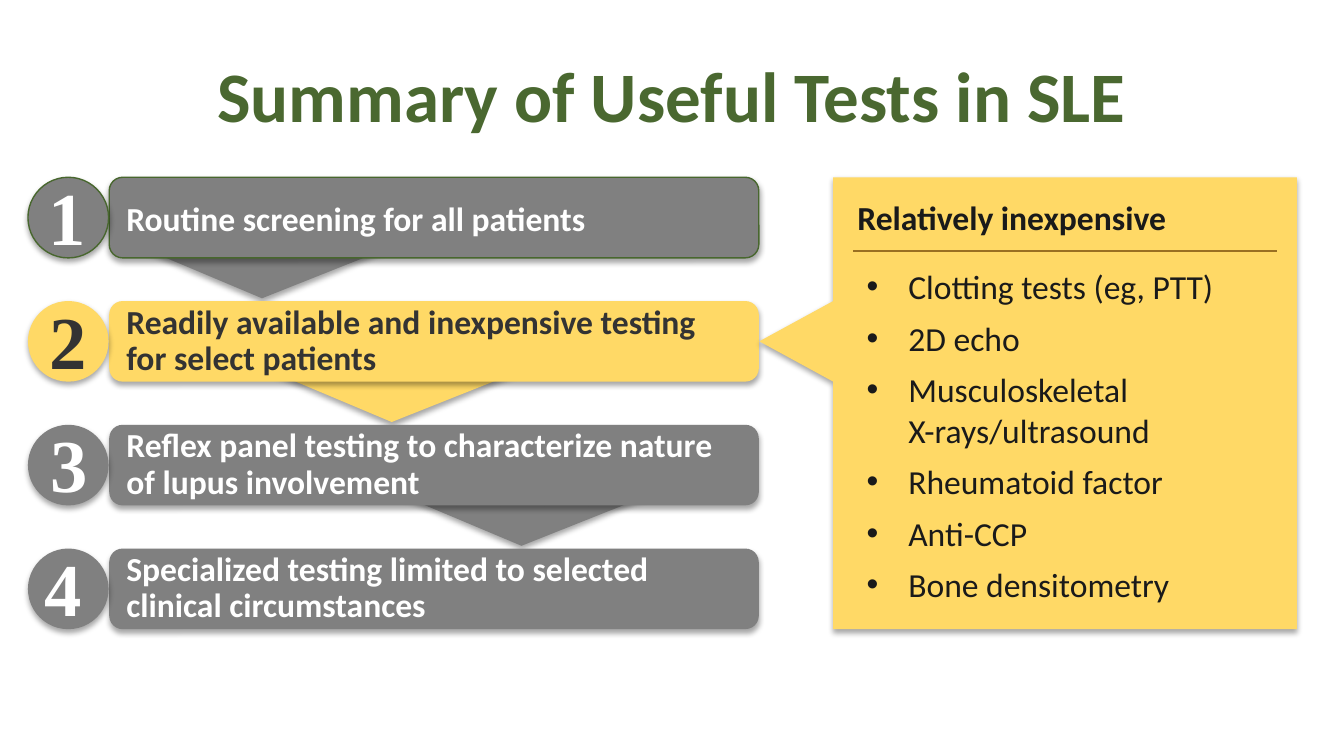
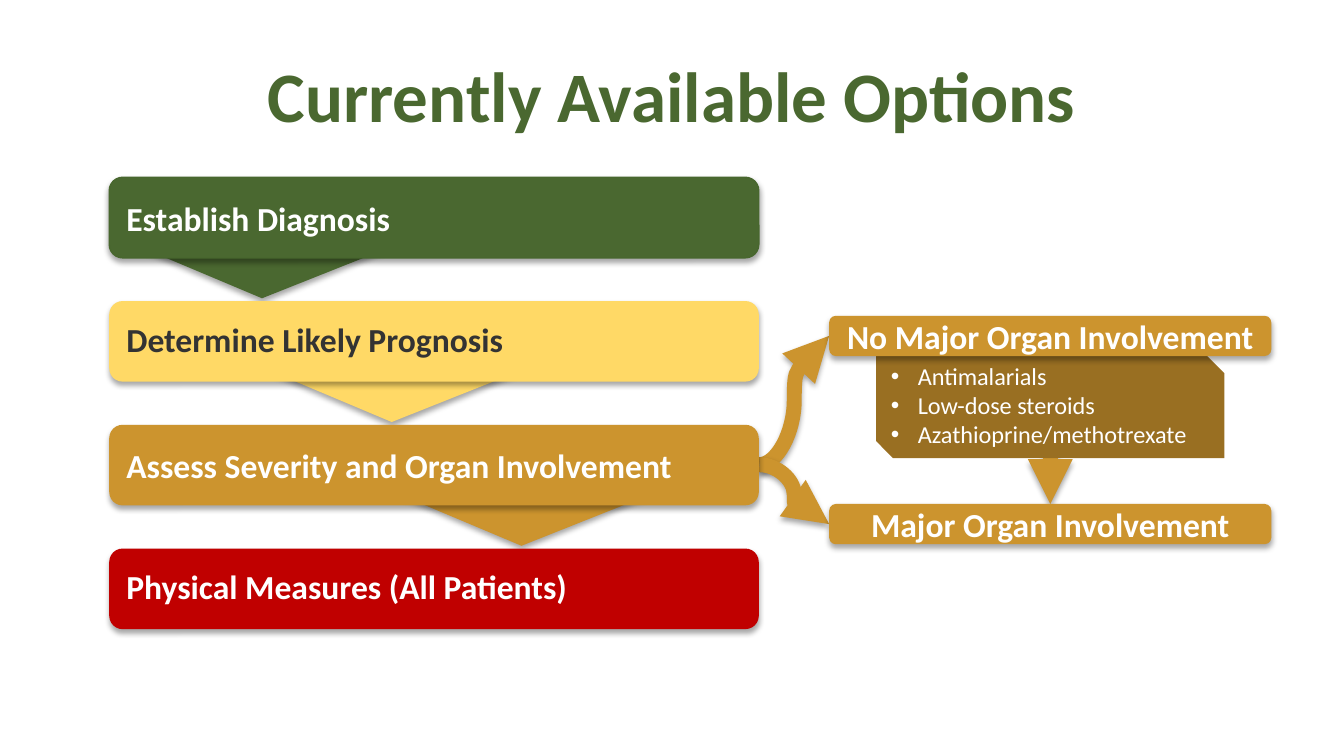
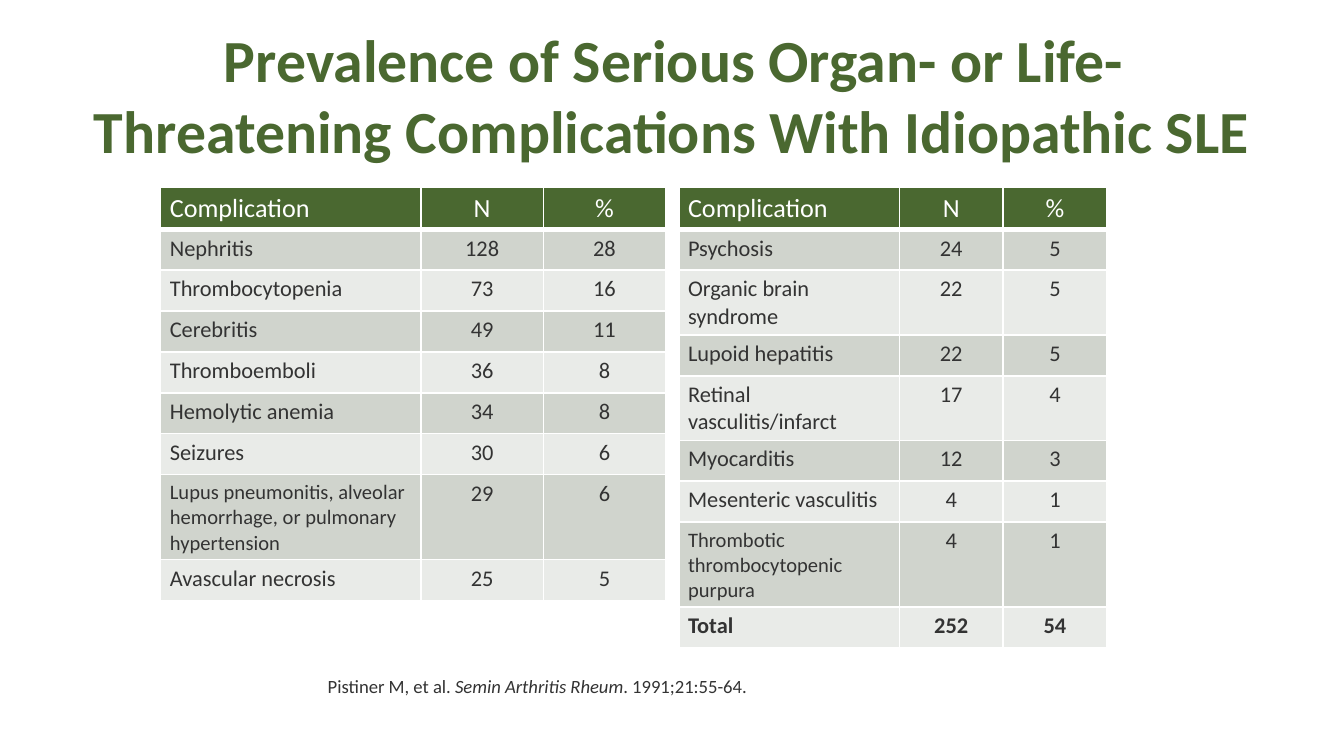
"""Build three slides on lupus testing, treatment options and complications."""
from dataclasses import dataclass

from lxml.etree import SubElement
from pptx import Presentation
from pptx.dml.color import RGBColor
from pptx.enum.shapes import MSO_CONNECTOR, MSO_SHAPE
from pptx.enum.text import MSO_ANCHOR, PP_ALIGN
from pptx.oxml.ns import qn
from pptx.util import Pt


@dataclass(frozen=True)
class Theme:
    green: str = "4A6830"
    outline: str = "48672E"
    yellow: str = "FFD966"
    gold: str = "CC942E"
    brown: str = "996F22"
    red: str = "C00000"
    gray: str = "808080"
    white: str = "FFFFFF"
    ink: str = "333333"
    black: str = "1A1A1A"
    bands: tuple = ("D0D4CD", "E9EBE8")
    face: str = "Calibri"
    numeral_face: str = "Times New Roman"
    title: int = 38
    long_title: int = 32
    numeral: int = 40
    body: int = 18
    header: int = 14
    treatment: int = 13
    cell: int = 12
    small_cell: int = 11
    citation: int = 10


theme = Theme()


def paint(shape, fill=None, line=None, width=0.75, shadow=True):
    if fill:
        shape.fill.solid()
        shape.fill.fore_color.rgb = RGBColor.from_string(fill)
    if line:
        shape.line.color.rgb = RGBColor.from_string(line)
        shape.line.width = Pt(width)
    else:
        shape.line.fill.background()
    effects = SubElement(shape._element.spPr, qn("a:effectLst"))
    if shadow:
        drop = SubElement(effects, qn("a:outerShdw"), blurRad=str(Pt(3.1)), dist=str(Pt(1.8)),
                          dir="5400000", algn="t", rotWithShape="0")
        color = SubElement(drop, qn("a:srgbClr"), val="000000")
        SubElement(color, qn("a:alpha"), val="35000")


def write(frame, lines, ink, size, font=None, layout=None, anchor=MSO_ANCHOR.TOP, wrap=True, indent=0):
    frame.word_wrap = wrap
    frame.vertical_anchor = anchor
    font_format = {"name": theme.face, "size": Pt(size), "bold": False} | (font or {})
    paragraph_format = {"alignment": PP_ALIGN.LEFT} | (layout or {})
    for number, line in enumerate(lines):
        paragraph = frame.add_paragraph() if number else frame.paragraphs[0]
        if isinstance(line, str):
            paragraph.text = line
        else:
            for piece in line:
                paragraph.add_run().text = piece
        for attribute, value in paragraph_format.items():
            if number or attribute != "space_before":
                setattr(paragraph, attribute, value)
        if indent:
            properties = paragraph._p.get_or_add_pPr()
            properties.set("marL", str(Pt(indent)))
            properties.set("indent", str(-Pt(indent)))
            SubElement(properties, qn("a:buFont"), typeface="Arial")
            SubElement(properties, qn("a:buChar"), char="•")
        for run in paragraph.runs:
            run.font.color.rgb = RGBColor.from_string(ink)
            for attribute, value in font_format.items():
                setattr(run.font, attribute, value)


deck = Presentation()
deck.slide_width, deck.slide_height = Pt(720), Pt(405)
bold = {"bold": True}
centered = {"alignment": PP_ALIGN.CENTER}

titles = [
    ("Summary of Useful Tests in SLE", theme.title),
    ("Currently Available Options", theme.title),
    ("Prevalence of Serious Organ- or Life-Threatening Complications With Idiopathic SLE", theme.long_title),
]
slides = []
for title, size in titles:
    slide = deck.slides.add_slide(deck.slide_layouts[6])
    heading = slide.shapes.add_textbox(Pt(36), Pt(16.6), Pt(648), Pt(67.7))
    write(heading.text_frame, [title], theme.green, size, bold, centered, MSO_ANCHOR.MIDDLE)
    slides.append(slide)
tests, options, prevalence = [slide.shapes for slide in slides]

outcome_left, outcome_width, outcome_height = 444.2, 236.9, 21.6
outcome_center = outcome_left + outcome_width / 2
outcomes = [("No Major Organ Involvement", 169.2), ("Major Organ Involvement", 270)]
escalation = (MSO_CONNECTOR.STRAIGHT, outcome_center, 190.8, outcome_center, 270)
branches = [(MSO_CONNECTOR.CURVE, 406.8, 249, outcome_left, top + outcome_height / 2) for _, top in outcomes]
for kind, *ends in [escalation, *branches]:
    flow = options.add_connector(kind, *[Pt(end) for end in ends])
    paint(flow, line=theme.gold, width=8)
    SubElement(flow.line._get_or_add_ln(), qn("a:tailEnd"), type="triangle")

treatment_panel = options.add_shape(MSO_SHAPE.SNIP_2_DIAG_RECTANGLE, Pt(469.4), Pt(190.8), Pt(186.5), Pt(54.7))
paint(treatment_panel, theme.brown, shadow=False)
treatments = options.add_textbox(Pt(470.2), Pt(190.1), Pt(185), Pt(54.7))
write(treatments.text_frame, ["Antimalarials", "Low-dose steroids", "Azathioprine/methotrexate"],
      theme.white, theme.treatment, indent=14.4)

for outcome, top in outcomes:
    outcome_box = options.add_shape(MSO_SHAPE.ROUNDED_RECTANGLE, Pt(outcome_left), Pt(top),
                                    Pt(outcome_width), Pt(outcome_height))
    paint(outcome_box, theme.gold)
    write(outcome_box.text_frame, [outcome], theme.white, theme.body, bold, centered, MSO_ANCHOR.MIDDLE)

step_left, step_top, step_width, step_height, step_pitch = 58.5, 95, 348, 43.2, 66.3
test_steps = [
    ("Routine screening for all patients", theme.gray, theme.white, 1),
    ("Readily available and inexpensive testing for select patients", theme.yellow, theme.ink, 0.9),
    ("Reflex panel testing to characterize nature of lupus involvement", theme.gray, theme.white, 0.9),
    ("Specialized testing limited to selected clinical circumstances", theme.gray, theme.white, 0.9),
]
option_steps = [
    ("Establish Diagnosis", theme.green, theme.white, 1),
    ("Determine Likely Prognosis", theme.yellow, theme.ink, 0.9),
    ("Assess Severity and Organ Involvement", theme.gold, theme.white, 1),
    ("Physical Measures (All Patients)", theme.red, theme.white, 0.9),
]
for shapes, steps in [(tests, test_steps), (options, option_steps)]:
    for order, (_, fill, _, _) in enumerate(steps[:-1]):
        left, top = 63.4 + order * 69.5, 127.4 + order * step_pitch
        pointer = shapes.build_freeform(Pt(left), Pt(top))
        pointer.add_line_segments([(Pt(left + 77), Pt(top + 32.4)), (Pt(left + 158.4), Pt(top))])
        paint(pointer.convert_to_shape(), fill)
    for order, (step, fill, ink, spacing) in enumerate(steps):
        bar = shapes.add_shape(MSO_SHAPE.ROUNDED_RECTANGLE, Pt(step_left), Pt(step_top + order * step_pitch),
                               Pt(step_width), Pt(step_height))
        paint(bar, fill, None if order else theme.outline)
        write(bar.text_frame, [step], ink, theme.body, bold, {"line_spacing": spacing}, MSO_ANCHOR.MIDDLE)

numeral_lefts = [18.7, 19.4, 20.2, 16.6]
for order, (left, (_, fill, ink, _)) in enumerate(zip(numeral_lefts, test_steps)):
    top = step_top + order * step_pitch
    badge = tests.add_shape(MSO_SHAPE.OVAL, Pt(15), Pt(top), Pt(step_height), Pt(step_height))
    paint(badge, fill, None if order else theme.outline)
    numeral = tests.add_textbox(Pt(left), Pt(top - 7), Pt(34.6), Pt(55.4))
    write(numeral.text_frame, [str(order + 1)], ink, theme.numeral, {"name": theme.numeral_face, "bold": True})

callout = tests.build_freeform(Pt(446.4), Pt(161.3))
callout.add_line_segments([(Pt(446.4), Pt(204.5)), (Pt(406.8), Pt(182.9))])
callout.move_to(Pt(446.4), Pt(95))
callout.add_line_segments([(Pt(x), Pt(y)) for x, y in [(694.8, 95), (694.8, 337), (446.4, 337)]])
paint(callout.convert_to_shape(), theme.yellow)
inexpensive_tests = tests.add_textbox(Pt(457.2), Pt(139), Pt(229.7), Pt(190))
write(inexpensive_tests.text_frame,
      ["Clotting tests (eg, PTT)", "2D echo", "Musculoskeletal\nX-rays/ultrasound",
       "Rheumatoid factor", "Anti-CCP", "Bone densitometry"],
      theme.black, theme.body, layout={"space_before": Pt(6)}, indent=22.3)
cost_heading = tests.add_textbox(Pt(452.2), Pt(102.2), Pt(181.4), Pt(28.8))
write(cost_heading.text_frame, ["Relatively inexpensive"], theme.black, theme.body, bold, wrap=False)
cost_rule = tests.add_connector(MSO_CONNECTOR.STRAIGHT, Pt(457.2), Pt(134.6), Pt(684), Pt(134.6))
paint(cost_rule, line=theme.brown, width=1, shadow=False)

row_heights = {1: 21.9, 2: 34.3, 3: 45.6}
column_names = ("Complication", "N", "%", 1)
common = [
    column_names,
    ("Nephritis", "128", "28", 1),
    ("Thrombocytopenia", "73", "16", 1),
    ("Cerebritis", "49", "11", 1),
    ("Thromboemboli", "36", "8", 1),
    ("Hemolytic anemia", "34", "8", 1),
    ("Seizures", "30", "6", 1),
    ("Lupus pneumonitis, alveolar hemorrhage, or pulmonary hypertension", "29", "6", 3),
    ("Avascular necrosis", "25", "5", 1),
]
rarer = [
    column_names,
    ("Psychosis", "24", "5", 1),
    ("Organic brain syndrome", "22", "5", 2),
    ("Lupoid hepatitis", "22", "5", 1),
    ("Retinal vasculitis/infarct", "17", "4", 2),
    ("Myocarditis", "12", "3", 1),
    ("Mesenteric vasculitis", "4", "1", 1),
    ("Thrombotic thrombocytopenic purpura", "4", "1", 3),
    ("Total", "252", "54", 1),
]
cell_margins = {"margin_left": Pt(5), "margin_right": Pt(5), "margin_top": Pt(2.9), "margin_bottom": Pt(2.9)}
for left, widths, records in [(86, (139.6, 65.5, 65.5), common), (363.6, (118.2, 55.6, 55.6), rarer)]:
    heights = [row_heights[record[-1]] for record in records]
    grid = prevalence.add_table(len(records), len(widths), Pt(left), Pt(100.3), Pt(sum(widths)), Pt(sum(heights))).table
    for column, width in zip(grid.columns, widths):
        column.width = Pt(width)
    for row, (*values, line_count) in enumerate(records):
        grid.rows[row].height = Pt(heights[row])
        for column, value in enumerate(values):
            cell = grid.cell(row, column)
            for attribute, margin in cell_margins.items():
                setattr(cell, attribute, margin)
            for side in ("lnL", "lnR", "lnT", "lnB"):
                thickness = 3 if row == 0 and side == "lnB" else 1
                border = SubElement(cell._tc.get_or_add_tcPr(), qn("a:" + side), w=str(Pt(thickness)))
                SubElement(SubElement(border, qn("a:solidFill")), qn("a:srgbClr"), val=theme.white)
            cell.fill.solid()
            cell.fill.fore_color.rgb = RGBColor.from_string(theme.bands[(row - 1) % 2] if row else theme.green)
            body_size = theme.small_cell if line_count == 3 and column == 0 else theme.cell
            write(cell.text_frame, [value], theme.ink if row else theme.white, body_size if row else theme.header,
                  {"bold": values[0] == "Total"}, centered if column else None)

citation = prevalence.add_textbox(Pt(172), Pt(362.2), Pt(548), Pt(39.6)).text_frame
citation_margins = {"margin_left": 3.6, "margin_top": 0.7, "margin_right": 18, "margin_bottom": 3.6}
for attribute, margin in citation_margins.items():
    setattr(citation, attribute, Pt(margin))
write(citation, [("Pistiner M, et al. ", "Semin Arthritis Rheum", ". 1991;21:55-64.")],
      theme.ink, theme.citation, layout={"line_spacing": 0.9})
citation.paragraphs[0].runs[1].font.italic = True

deck.save("out.pptx")
